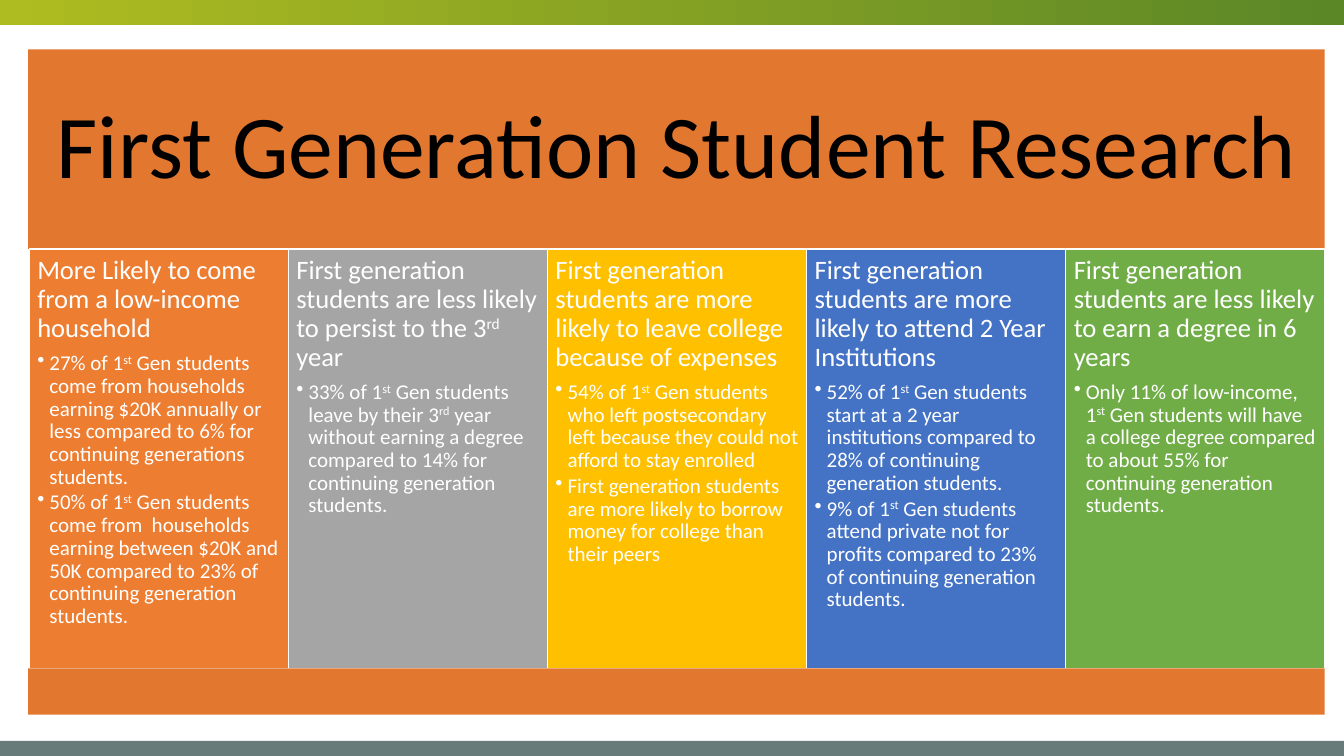
"""Build the First Generation Student Research slide."""
from dataclasses import dataclass

from lxml import etree
from pptx import Presentation
from pptx.dml.color import RGBColor
from pptx.enum.shapes import MSO_SHAPE
from pptx.enum.text import MSO_ANCHOR, PP_ALIGN
from pptx.oxml.ns import qn
from pptx.shapes.autoshape import Shape
from pptx.slide import Slide
from pptx.util import Inches, Pt

RECTANGLE = MSO_SHAPE.RECTANGLE
TOP, MIDDLE = MSO_ANCHOR.TOP, MSO_ANCHOR.MIDDLE
LEFT, CENTER = PP_ALIGN.LEFT, PP_ALIGN.CENTER


@dataclass(frozen=True)
class Theme:
    font: str = "Calibri"
    title_size: int = 64
    heading_size: int = 19
    bullet_size: int = 15
    title_color: str = "000000"
    text_color: str = "FFFFFF"
    border: str = "FFFFFF"
    banner: str = "E2772F"
    strip_start: str = "AFBC21"
    strip_end: str = "5B8727"
    footer: str = "667B7A"
    line_spacing: float = 0.9
    heading_gap: float = 0.35
    bullet_gap: float = 0.15


@dataclass(frozen=True)
class Box:
    left: float
    top: float
    width: float
    height: float


@dataclass(frozen=True)
class Finding:
    """A research column; carets in its text enclose superscripts."""
    color: str
    heading: str
    bullets: tuple[str, ...]


THEME = Theme()
SLIDE_WIDTH, SLIDE_HEIGHT = 13.33, 7.5
TOP_STRIP = Box(0, -0.01, SLIDE_WIDTH, 0.26)
BOTTOM_STRIP = Box(0, 7.35, SLIDE_WIDTH, 0.16)
TITLE_BANNER = Box(0.28, 0.49, 12.86, 1.98)
BASE_BANNER = Box(0.28, 6.63, 12.86, 0.46)
FIRST_COLUMN = Box(0.29, 2.47, 2.57, 4.16)
TITLE_INSET, COLUMN_INSET = 0.27, 0.08
BULLET_INDENT = 0.12

FINDINGS = (
    Finding("ED7D31", "More Likely to come from a low-income household", (
        "27% of 1^st^ Gen students come from households earning $20K annually "
        "or less compared to 6% for continuing generations students.",
        "50% of 1^st^ Gen students come from  households earning between $20K "
        "and 50K compared to 23% of continuing generation students.")),
    Finding("A5A5A5", "First generation students are less likely to persist to the 3^rd^ year", (
        "33% of 1^st^ Gen students leave by their 3^rd^ year without earning "
        "a degree compared to 14% for continuing generation students.",)),
    Finding("FFC000", "First generation students are more likely to leave college because of expenses", (
        "54% of 1^st^ Gen students who left postsecondary left because they "
        "could not afford to stay enrolled",
        "First generation students are more likely to borrow money for "
        "college than their peers")),
    Finding("4472C4", "First generation students are more likely to attend 2 Year Institutions", (
        "52% of 1^st^ Gen students start at a 2 year institutions compared "
        "to 28% of continuing generation students.",
        "9% of 1^st^ Gen students attend private not for profits compared "
        "to 23% of continuing generation students.")),
    Finding("70AD47", "First generation students are less likely to earn a degree in 6 years", (
        "Only 11% of low-income, 1^st^ Gen students will have a college "
        "degree compared to about 55% for continuing generation students.",)),
)


def add_panel(slide: Slide, box: Box, color: str) -> Shape:
    """Draw a plain filled rectangle."""
    panel = slide.shapes.add_shape(
        RECTANGLE, Inches(box.left), Inches(box.top), Inches(box.width), Inches(box.height))
    panel.shadow.inherit = False
    panel.fill.solid()
    panel.fill.fore_color.rgb = RGBColor.from_string(color)
    panel.line.fill.background()
    return panel


def set_frame(panel: Shape, inset: float, anchor: MSO_ANCHOR) -> None:
    """Set wrapping, equal insets and vertical anchor of a panel's text."""
    frame = panel.text_frame
    frame.word_wrap = True
    frame.vertical_anchor = anchor
    frame.margin_left = frame.margin_right = Inches(inset)
    frame.margin_top = frame.margin_bottom = Inches(inset)


def write_paragraph(panel: Shape, text: str, size: int, color: str, gap: float,
                    align: PP_ALIGN = LEFT, bulleted: bool = False) -> None:
    """Add a paragraph, raising every part enclosed in carets."""
    frame = panel.text_frame
    paragraph = frame.add_paragraph() if frame.text else frame.paragraphs[0]
    paragraph.alignment = align
    paragraph.line_spacing = THEME.line_spacing
    paragraph.space_after = Pt(size * gap)
    if bulleted:
        paragraph.level = 1
        properties = paragraph._p.get_or_add_pPr()
        properties.set("marL", str(Inches(BULLET_INDENT)))
        properties.set("indent", str(-Inches(BULLET_INDENT)))
        etree.SubElement(properties, qn("a:buChar")).set("char", "•")
    paragraph.font.name = THEME.font
    paragraph.font.size = Pt(size)
    paragraph.font.color.rgb = RGBColor.from_string(color)
    for position, part in enumerate(text.split("^")):
        run = paragraph.add_run()
        run.text = part
        if position % 2:
            run.font._element.set("baseline", "30000")


def add_finding(slide: Slide, finding: Finding, position: int) -> None:
    """Draw one research column with its heading and bullets."""
    first = FIRST_COLUMN
    box = Box(first.left + position * first.width, first.top, first.width, first.height)
    column = add_panel(slide, box, finding.color)
    column.line.color.rgb = RGBColor.from_string(THEME.border)
    column.line.width = Pt(1)
    set_frame(column, COLUMN_INSET, TOP)
    write_paragraph(column, finding.heading, THEME.heading_size,
                    THEME.text_color, THEME.heading_gap)
    for bullet in finding.bullets:
        write_paragraph(column, bullet, THEME.bullet_size,
                        THEME.text_color, THEME.bullet_gap, bulleted=True)


def main() -> None:
    """Assemble and save the slide."""
    presentation = Presentation()
    presentation.slide_width = Inches(SLIDE_WIDTH)
    presentation.slide_height = Inches(SLIDE_HEIGHT)
    slide = presentation.slides.add_slide(presentation.slide_layouts[6])

    top_strip = add_panel(slide, TOP_STRIP, THEME.strip_start)
    top_strip.fill.gradient()
    top_strip.fill.gradient_angle = 0
    for stop, color in zip(top_strip.fill.gradient_stops, (THEME.strip_start, THEME.strip_end)):
        stop.color.rgb = RGBColor.from_string(color)
    add_panel(slide, BOTTOM_STRIP, THEME.footer)

    title = add_panel(slide, TITLE_BANNER, THEME.banner)
    set_frame(title, TITLE_INSET, MIDDLE)
    write_paragraph(title, "First Generation Student Research", THEME.title_size,
                    THEME.title_color, THEME.heading_gap, CENTER)
    for position, finding in enumerate(FINDINGS):
        add_finding(slide, finding, position)
    add_panel(slide, BASE_BANNER, THEME.banner)

    presentation.save("out.pptx")


if __name__ == "__main__":
    main()
